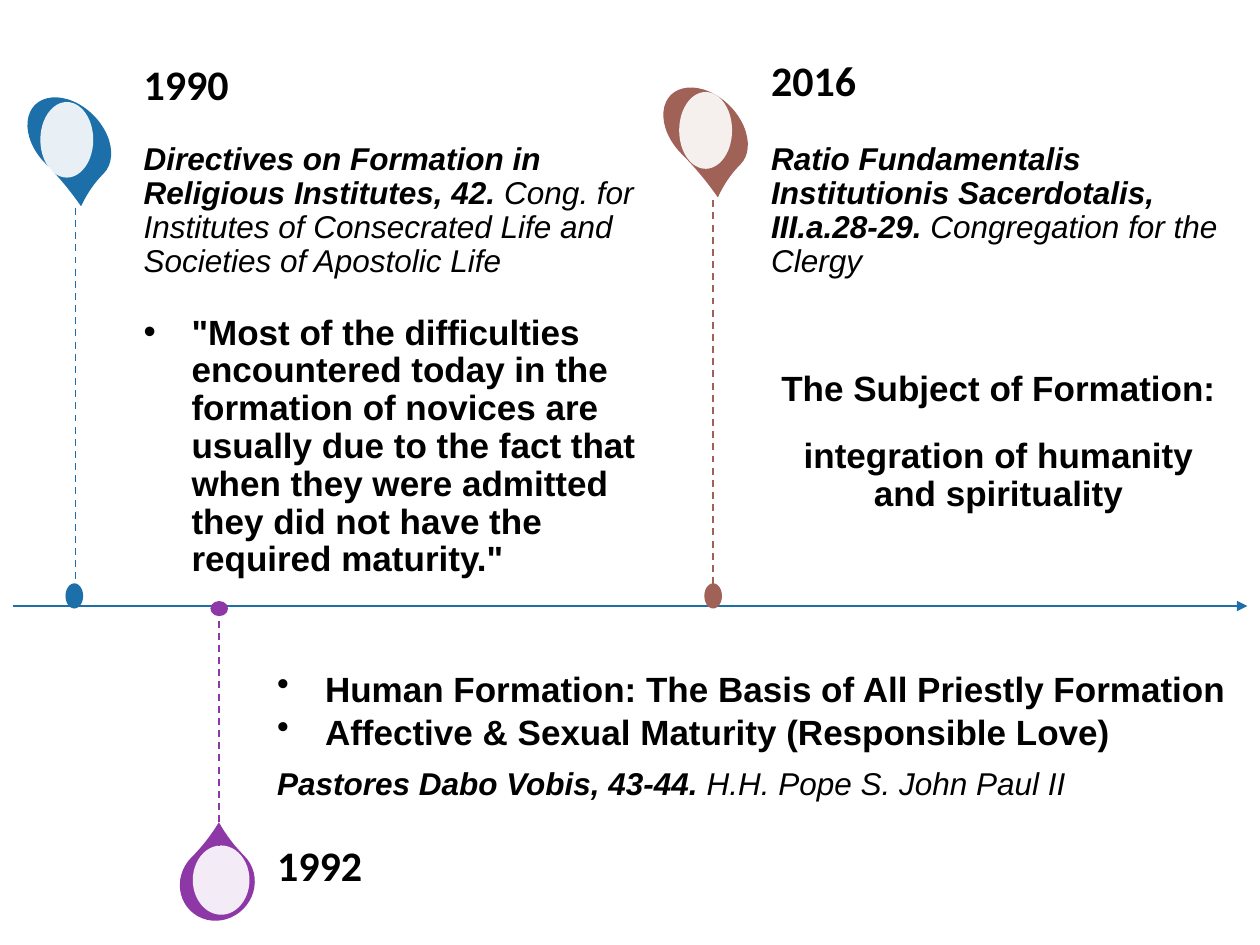
from dataclasses import dataclass

import pptx
import pptx.util
from lxml import etree
from pptx.dml.color import RGBColor
from pptx.enum.dml import MSO_LINE
from pptx.enum.shapes import MSO_CONNECTOR, MSO_SHAPE
from pptx.enum.text import MSO_ANCHOR, MSO_AUTO_SIZE, PP_ALIGN
from pptx.oxml.ns import qn

PX = 9144  # EMU in one px, at 100 px to the inch
Box = tuple[int, int, int, int]


@dataclass(frozen=True)
class Theme:
    blue: str = "1D6FA9"
    purple: str = "8E37A7"
    red: str = "A06157"
    white: str = "FFFFFF"
    text: str = "000000"
    heading_font: str = "Calibri"
    body_font: str = "Arial"
    year: int = 24
    point: int = 20
    source: int = 18


THEME = Theme()


@dataclass(frozen=True)
class Span:
    text: str
    size: int = THEME.point
    bold: bool = True
    italic: bool = False
    font: str = THEME.body_font


@dataclass(frozen=True)
class Para:
    spans: list[Span]
    after: int = 3
    before: int = 0
    bullet: bool = False
    align: PP_ALIGN = PP_ALIGN.LEFT


@dataclass(frozen=True)
class Pin:
    color: str
    drop: Box
    angle: int
    window: Box
    stem: Box  # from x, y to x, y
    dot: Box


@dataclass(frozen=True)
class Event:
    year: str
    year_box: Box
    detail_box: Box
    insets: Box
    anchor: MSO_ANCHOR
    paras: list[Para]
    pin: Pin


def emu(lengths: Box) -> list[int]:
    return [length * PX for length in lengths]


def assign(target, values: dict) -> None:
    for name, value in values.items():
        setattr(target, name, value)


def source_line(title: str, author: str, after: int, before: int = 0) -> Para:
    return Para([Span(title, THEME.source, True, True),
                 Span(author, THEME.source, False, True)], after, before)


def write_text(shape, box: Box, insets: Box, anchor: MSO_ANCHOR, paras: list[Para]) -> None:
    assign(shape, dict(zip(("left", "top", "width", "height"), emu(box))))
    frame = shape.text_frame
    margins = ("margin_left", "margin_top", "margin_right", "margin_bottom")
    assign(frame, dict(zip(margins, emu(insets))))
    assign(frame, {"word_wrap": True, "auto_size": MSO_AUTO_SIZE.NONE,
                   "vertical_anchor": anchor})
    for index, para in enumerate(paras):
        paragraph = frame.add_paragraph() if index else frame.paragraphs[0]
        assign(paragraph, {"alignment": para.align, "line_spacing": 0.9,
                           "space_before": pptx.util.Pt(para.before),
                           "space_after": pptx.util.Pt(para.after)})
        set_bullet(paragraph, para.bullet)
        for span in para.spans:
            run = paragraph.add_run()
            run.text = span.text
            assign(run.font, {"name": span.font, "size": pptx.util.Pt(span.size),
                              "bold": span.bold, "italic": span.italic})
            run.font.color.rgb = RGBColor.from_string(THEME.text)


def set_bullet(paragraph, bullet: bool) -> None:
    properties = paragraph._p.get_or_add_pPr()
    indent = 38 * PX if bullet else 0
    properties.set("marL", str(indent))
    properties.set("indent", str(-indent))
    if bullet:
        etree.SubElement(properties, qn("a:buChar")).set("char", "•")
    else:
        etree.SubElement(properties, qn("a:buNone"))


def draw_shape(page, kind: MSO_SHAPE, box: Box, color: str):
    shape = page.shapes.add_shape(kind, *emu(box))
    shape.shadow.inherit = False
    shape.fill.solid()
    shape.fill.fore_color.rgb = RGBColor.from_string(color)
    shape.line.fill.background()
    return shape


def draw_line(page, ends: Box, color: str, width: float):
    line = page.shapes.add_connector(MSO_CONNECTOR.STRAIGHT, *emu(ends))
    line.line.color.rgb = RGBColor.from_string(color)
    line.line.width = pptx.util.Pt(width)
    etree.SubElement(line._element.spPr, qn("a:effectLst"))
    return line


def draw_pin(page, pin: Pin) -> None:
    drop = draw_shape(page, MSO_SHAPE.TEAR, pin.drop, pin.color)
    drop.rotation = pin.angle
    drop.adjustments[0] = 1.15
    window = draw_shape(page, MSO_SHAPE.OVAL, pin.window, THEME.white)
    tint = window._element.spPr.find(qn("a:solidFill"))[0]
    etree.SubElement(tint, qn("a:alpha")).set("val", "90000")
    draw_line(page, pin.stem, pin.color, 1).line.dash_style = MSO_LINE.DASH
    draw_shape(page, MSO_SHAPE.OVAL, pin.dot, pin.color)


def draw_event(page, event: Event, heading, detail) -> None:
    year = Span(event.year, THEME.year, font=THEME.heading_font)
    write_text(heading, event.year_box, (0, 0, 14, 0), MSO_ANCHOR.MIDDLE, [Para([year], 8)])
    write_text(detail, event.detail_box, event.insets, event.anchor, event.paras)
    draw_pin(page, event.pin)


EVENTS = [
    Event("1990", (114, 31, 380, 76), (114, 104, 426, 361), (0, 10, 10, 15), MSO_ANCHOR.TOP, [
        source_line("Directives on Formation in Religious Institutes, 42. ",
                    "Cong. for Institutes of Consecrated Life and Societies of Apostolic Life", 20),
        Para([Span('"Most of the difficulties encountered today in the formation of novices '
                   "are usually due to the fact that when they were admitted they did not "
                   'have the required maturity."')], bullet=True),
    ], Pin(THEME.blue, (28, 72, 54, 77), 135, (32, 81, 42, 60),
           (60, 165, 60, 473), (52, 463, 14, 20))),
    Event("2016", (612, 28, 303, 76), (612, 104, 371, 331), (0, 10, 10, 16), MSO_ANCHOR.TOP, [
        source_line("Ratio Fundamentalis Institutionis Sacerdotalis, III.a.28-29. ",
                    "Congregation for the Clergy", 52),
        Para([Span("The Subject of Formation:")], 17, align=PP_ALIGN.CENTER),
        Para([Span("integration of humanity and spirituality")], align=PP_ALIGN.CENTER),
    ], Pin(THEME.red, (533, 64, 54, 78), 135, (539, 73, 42, 61),
           (566, 159, 566, 473), (559, 463, 14, 20))),
    Event("1992", (220, 656, 408, 66), (220, 488, 763, 188), (0, 16, 0, 10), MSO_ANCHOR.MIDDLE, [
        Para([Span("Human Formation: The Basis of All Priestly Formation")], bullet=True),
        Para([Span("Affective & Sexual Maturity (Responsible Love)")], bullet=True),
        source_line("Pastores Dabo Vobis, 43-44. ", "H.H. Pope S. John Paul II", 6, 6),
    ], Pin(THEME.purple, (142, 672, 61, 58), 315, (153, 671, 45, 55),
           (174, 483, 174, 674), (167, 477, 14, 12))),
]


def main() -> None:
    deck = pptx.Presentation()
    assign(deck, {"slide_width": 1000 * PX, "slide_height": 750 * PX})
    page = deck.slides.add_slide(deck.slide_layouts.get_by_name("Comparison"))

    # Time axis
    axis = draw_line(page, (10, 481, 990, 481), THEME.blue, 1.5)
    etree.SubElement(axis.line._get_or_add_ln(), qn("a:tailEnd")).set("type", "triangle")

    # Events: a heading, a detail text and a pin each
    holders = {holder.placeholder_format.idx: holder for holder in page.placeholders}
    pairs = [(holders[1], holders[2]), (holders[3], holders[4]),
             (holders[0], page.shapes.add_textbox(0, 0, PX, PX))]
    for event, (heading, detail) in zip(EVENTS, pairs):
        draw_event(page, event, heading, detail)

    deck.save("out.pptx")


if __name__ == "__main__":
    main()
